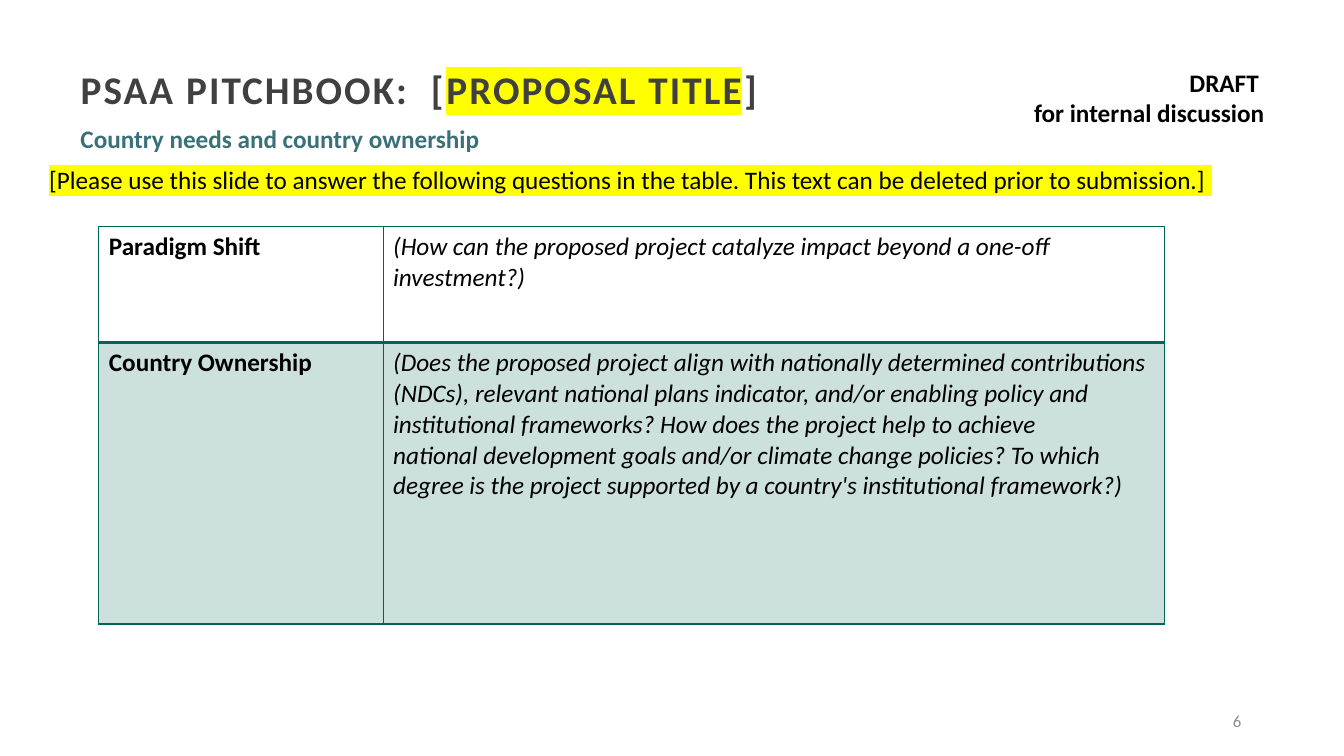
"""Build the country needs and ownership slide of a pitchbook."""
from dataclasses import dataclass

from lxml import etree
from pptx import Presentation
from pptx.dml.color import RGBColor
from pptx.enum import shapes, text as t
from pptx.oxml import ns
from pptx.util import Inches, Pt

NBSP = chr(160)


@dataclass(frozen=True)
class Theme:
    font: str = "Calibri"
    black: str = "000000"
    title: str = "404040"
    teal: str = "3A7179"
    grey: str = "8C8C8C"
    white: str = "FFFFFF"
    border: str = "006558"
    band: str = "CCE0DE"
    highlight: str = "FFFF00"
    title_size: int = 28
    body_size: int = 18
    small_size: int = 12


THEME = Theme()


def style(p, size=THEME.body_size, color=THEME.black, bold=False, italic=False):
    f = p.font
    f.name, f.size, f.bold, f.italic = THEME.font, Pt(size), bold, italic
    f.color.rgb = RGBColor.from_string(color)


def set_fill(item, color):
    item.fill.solid()
    item.fill.fore_color.rgb = RGBColor.from_string(color)


def add_color(parent, tag, color):
    el = etree.SubElement(parent, ns.qn(tag))
    etree.SubElement(el, ns.qn("a:srgbClr"), val=color)


def highlight(r):
    add_color(r._r.get_or_add_rPr(), "a:highlight", THEME.highlight)


def place(s, left, top, width, height):
    s.left, s.top = Inches(left), Inches(top)
    s.width, s.height = Inches(width), Inches(height)


def add_title(slide, parts):
    s = slide.shapes.title
    place(s, 0.7, 0.65, 10.1, 0.61)
    tf = s.text_frame
    tf.auto_size = t.MSO_AUTO_SIZE.NONE
    tf.vertical_anchor = t.MSO_ANCHOR.TOP
    p = tf.paragraphs[0]
    p.alignment, p.line_spacing = t.PP_ALIGN.LEFT, 0.9
    style(p, THEME.title_size, THEME.title, bold=True)
    for words, marked in parts:
        r = p.add_run()
        r.text = words
        r._r.get_or_add_rPr().set("spc", "150")
        if marked:
            highlight(r)


def write(s, lines, align=t.PP_ALIGN.LEFT, **font):
    tf = s.text_frame
    tf.word_wrap = True
    for i, line in enumerate(lines):
        p = tf.add_paragraph() if i else tf.paragraphs[0]
        p.alignment = align
        style(p, **font)
        p.add_run().text = line


def add_text(slide, box, lines, align=t.PP_ALIGN.LEFT, **font):
    s = slide.shapes.add_textbox(*map(Inches, box))
    write(s, lines, align, **font)
    return s


def add_subtitle(slide, box, words):
    s = slide.shapes.add_shape(shapes.MSO_SHAPE.RECTANGLE, *map(Inches, box))
    s.shadow.inherit = False
    set_fill(s, THEME.white)
    s.line.fill.background()
    s.text_frame.vertical_anchor = t.MSO_ANCHOR.TOP
    write(s, [words], color=THEME.teal, bold=True)


def set_borders(cell, widths):
    tcPr = cell._tc.get_or_add_tcPr()
    for side, width in zip("LRTB", widths):
        ln = etree.SubElement(tcPr, ns.qn(f"a:ln{side}"), w=str(Pt(width)))
        add_color(ln, "a:solidFill", THEME.border)


def add_questions(slide, rows, col_widths, row_heights):
    s = slide.shapes.add_table(len(rows), len(col_widths), Inches(0.98), Inches(2.25),
                               Inches(sum(col_widths)), Inches(sum(row_heights)))
    table = s.table
    for col, width in zip(table.columns, col_widths):
        col.width = Inches(width)
    fills = (THEME.white, THEME.band)
    borders = ((1, 1, 1, 2), (1, 1, 2, 1))
    for i, row in enumerate(rows):
        table.rows[i].height = Inches(row_heights[i])
        for j, words in enumerate(row):
            cell = table.cell(i, j)
            set_borders(cell, borders[i])
            set_fill(cell, fills[i])
            p = cell.text_frame.paragraphs[0]
            style(p, bold=j == 0, italic=j == 1)
            p.add_run().text = words


def main():
    prs = Presentation()
    prs.slide_width, prs.slide_height = Inches(13.33), Inches(7.5)
    slide = prs.slides.add_slide(prs.slide_layouts[5])

    add_text(slide, (5.83, 0.62, 6.81, 0.71), ["DRAFT ", "for internal discussion"],
             t.PP_ALIGN.RIGHT, bold=True)
    add_title(slide, [(f"PSAA PITCHBOOK:{NBSP} [", False), ("PROPOSAL TITLE", True),
                      ("]", False)])
    add_subtitle(slide, (0.7, 1.17, 5.97, 0.4), "Country needs and country ownership")
    add_questions(slide, [
        ("Paradigm Shift",
         "(How can the proposed project catalyze impact beyond a one-off investment?)"),
        ("Country Ownership",
         "(Does the proposed project align with nationally determined contributions (NDCs), "
         "relevant national plans indicator, and/or enabling policy and institutional "
         f"frameworks? How does the project help to achieve national{NBSP}development goals "
         f"and/or climate change policies? To{NBSP}which degree is the project supported by "
         f"a country's{NBSP}institutional framework?)"),
    ], (2.82, 7.75), (1.15, 2.79))
    note = add_text(slide, (0.39, 1.58, 12.56, 0.4), [
        "[Please use this slide to answer the following questions in the table. "
        "This text can be deleted prior to submission.] "])
    highlight(note.text_frame.paragraphs[0].runs[0])
    number = add_text(slide, (9.41, 6.95, 3, 0.4), ["6"], t.PP_ALIGN.RIGHT,
                      size=THEME.small_size, color=THEME.grey)
    number.text_frame.vertical_anchor = t.MSO_ANCHOR.MIDDLE
    prs.save("out.pptx")


if __name__ == "__main__":
    main()
